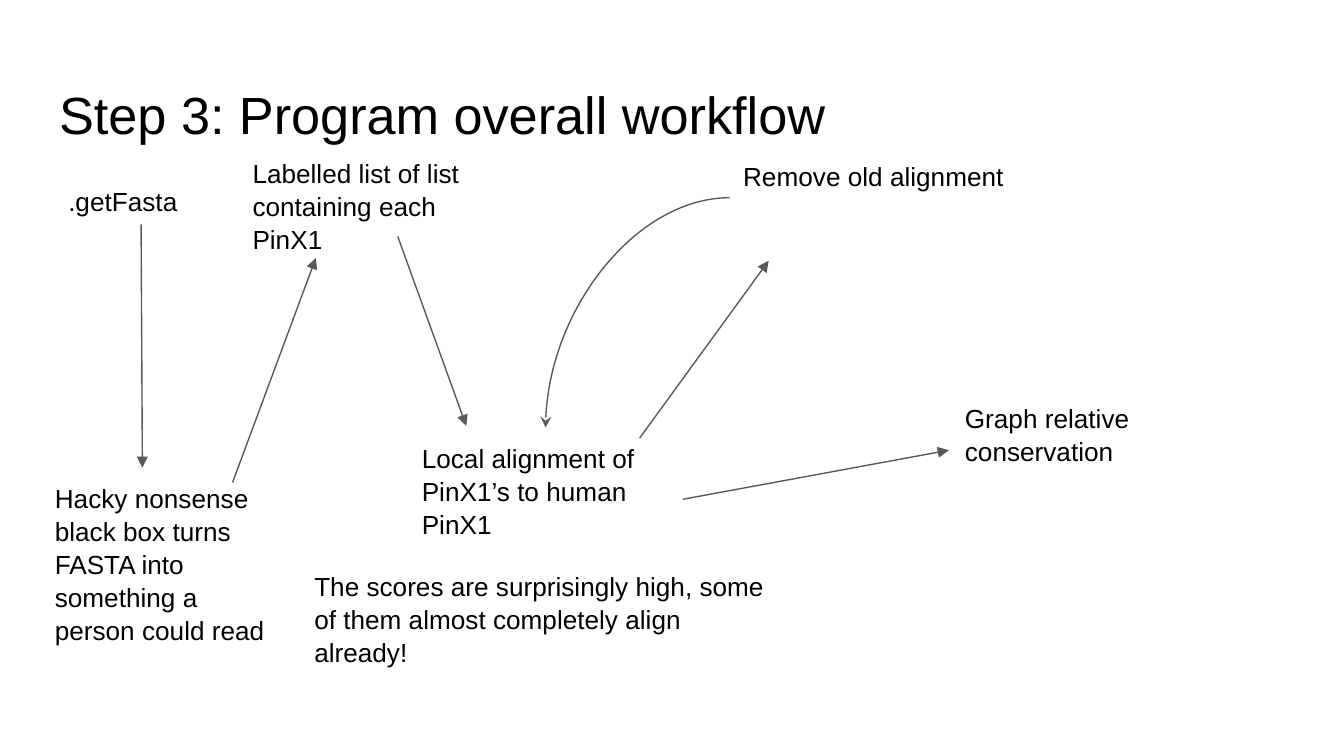
from lxml import etree
from pptx import Presentation
from pptx.dml.color import RGBColor
from pptx.enum.shapes import MSO_CONNECTOR
from pptx.enum.text import MSO_ANCHOR, MSO_AUTO_SIZE, PP_ALIGN
from pptx.oxml.ns import qn
from pptx.util import Pt

STRAIGHT, CURVE = MSO_CONNECTOR.STRAIGHT, MSO_CONNECTOR.CURVE
TOP_ANCHOR, NO_FIT, LEFT_ALIGN = MSO_ANCHOR.TOP, MSO_AUTO_SIZE.NONE, PP_ALIGN.LEFT
TOP, LEFT, RIGHT = 0, 1, 3  # connection sites of a rectangle
TITLE_ONLY = 5

COLORS = {"text": "000000", "arrow": "595959"}
INSET = Pt(7.2)
FRAME_FORMAT = {
    "word_wrap": True,
    "auto_size": NO_FIT,
    "vertical_anchor": TOP_ANCHOR,
    "margin_left": INSET,
    "margin_top": INSET,
    "margin_right": INSET,
    "margin_bottom": INSET,
}
PARAGRAPH_FORMAT = {"alignment": LEFT_ALIGN, "line_spacing": 1.05}


class WorkflowSlide:
    """Holds the style and the slide being drawn."""

    font = "Arial"
    title_size = 28
    label_size = 14
    arrow_width = 0.75

    def __init__(self, slide):
        self.slide = slide

    def fill_text(self, shape, text, size):
        frame = shape.text_frame
        frame.text = text
        for name, value in FRAME_FORMAT.items():
            setattr(frame, name, value)
        paragraph = frame.paragraphs[0]
        for name, value in PARAGRAPH_FORMAT.items():
            setattr(paragraph, name, value)
        font = paragraph.runs[0].font
        font.name, font.size = self.font, Pt(size)
        font.color.rgb = RGBColor.from_string(COLORS["text"])

    def title(self, text, left, top, width, height):
        heading = self.slide.shapes.title
        heading.left, heading.top = Pt(left), Pt(top)
        heading.width, heading.height = Pt(width), Pt(height)
        self.fill_text(heading, text, self.title_size)

    def label(self, text, left, top, width, height):
        box = self.slide.shapes.add_textbox(Pt(left), Pt(top), Pt(width), Pt(height))
        self.fill_text(box, text, self.label_size)
        return box

    def arrow(self, start, end, kind=STRAIGHT, head="triangle"):
        link = self.slide.shapes.add_connector(kind, *map(Pt, start + end))
        link.line.width = Pt(self.arrow_width)
        link.line.color.rgb = RGBColor.from_string(COLORS["arrow"])
        properties = link.element.spPr
        etree.SubElement(properties.find(qn("a:ln")), qn("a:tailEnd"),
                         type=head, w="med", len="med")
        etree.SubElement(properties, qn("a:effectLst"))
        return link

    def quarter_curve(self, start, end):
        link = self.arrow(start, end, CURVE, "stealth")
        link.element.spPr.find(qn("a:prstGeom")).set("prst", "curvedConnector2")
        return link


def main():
    deck = Presentation()
    deck.slide_width, deck.slide_height = Pt(720), Pt(405)
    workflow = WorkflowSlide(deck.slides.add_slide(deck.slide_layouts[TITLE_ONLY]))

    workflow.title("Step 3: Program overall workflow", 24.5, 35.3, 671, 45.4)

    # Fetching and parsing the sequences
    workflow.label(".getFasta", 29.5, 91.4, 146.9, 56.2)
    workflow.arrow((75.6, 120.2), (76.3, 250.6))
    workflow.label(
        "Hacky nonsense black box turns FASTA into something a person could read",
        22.3, 250.6, 129.6, 61.9)
    workflow.arrow((124.6, 258.5), (169.2, 138.2))
    workflow.label("Labelled list of list containing each PinX1",
                   128.2, 76.3, 126.7, 51.1)
    workflow.arrow((213.1, 126.7), (249.8, 228.2))

    # Aligning
    alignment = workflow.label("Local alignment of PinX1’s to human PinX1",
                               218.9, 229, 146.9, 77)
    workflow.label(
        "The scores are surprisingly high, some of them almost completely align already!",
        161.3, 297.4, 261.4, 65.5)

    # Loop that drops the old alignment
    workflow.arrow((342.7, 234.7), (411.8, 139.7))
    removal = workflow.label("Remove old alignment", 391, 77.8, 238.3, 56.2)
    loop_back = workflow.quarter_curve((391, 105.9), (292.35, 229))
    loop_back.begin_connect(removal, LEFT)
    loop_back.end_connect(alignment, TOP)

    # Result
    to_graph = workflow.arrow((365.8, 267.5), (508.3, 241.2))
    to_graph.begin_connect(alignment, RIGHT)
    workflow.label("Graph relative conservation", 509.8, 207.4, 169.2, 77)

    deck.save("out.pptx")


if __name__ == "__main__":
    main()
